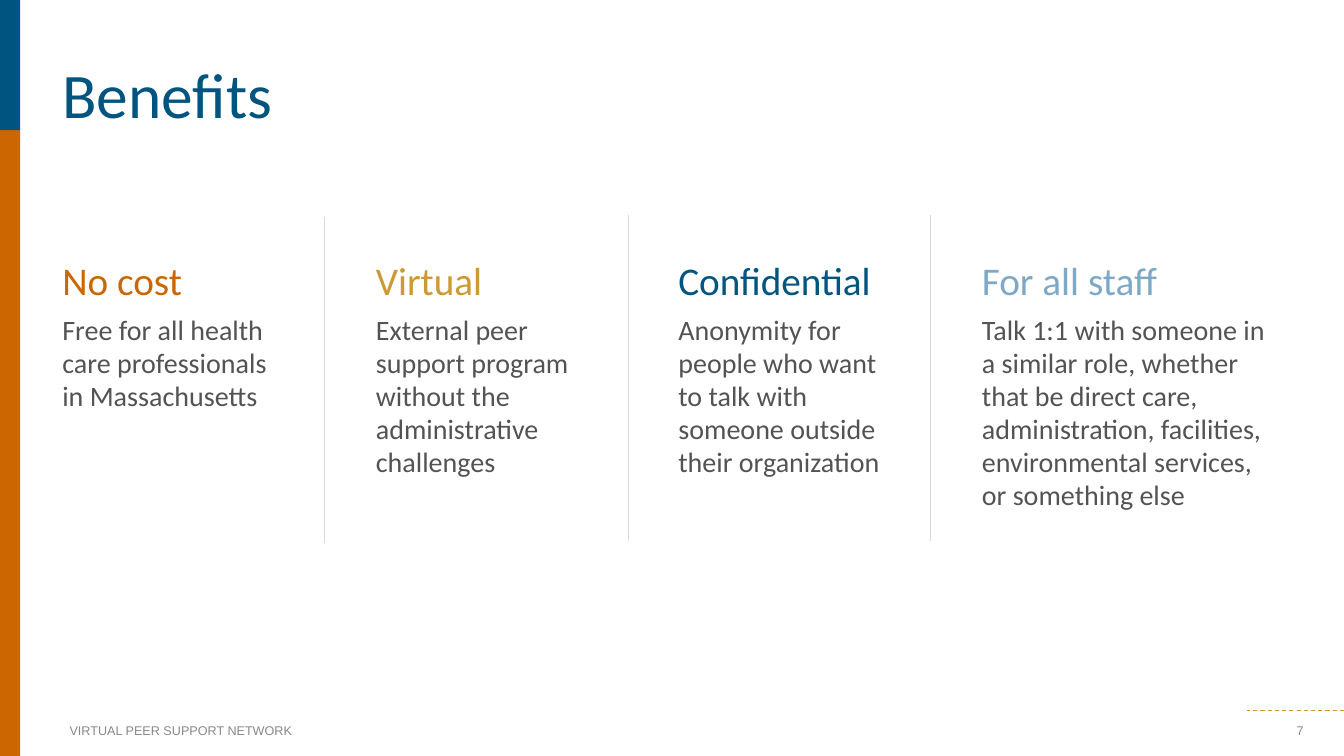
import pptx
import pptx.dml.color
import pptx.enum.dml
import pptx.enum.shapes
import pptx.enum.text
import pptx.oxml.ns
import pptx.util
from pptx.util import Inches

BLUE, ORANGE, GOLD, PALE_BLUE = "005480", "CC6600", "CC9933", "7EA9C6"
BODY_GREY, FOOTER_GREY, RULE_GREY = "535353", "898989", "D9D9D9"

BENEFITS = [
    ("No cost", ORANGE, 2.3, "Free for all health care professionals in Massachusetts"),
    ("Virtual", GOLD, 2.2,
     "External peer support program without the administrative challenges"),
    ("Confidential", BLUE, 2.2,
     "Anonymity for people who want to talk with someone outside their organization"),
    ("For all staff", PALE_BLUE, 3.01,
     "Talk 1:1 with someone in a similar role, whether that be direct care, "
     "administration, facilities, environmental services, or something else"),
]
COLUMN_LEFTS = [0.52, 3.63, 6.63, 9.64]
DIVIDERS = [(3.22, 2.15), (6.23, 2.13), (9.23, 2.13)]


def colour(value):
    """Turn a hex string into a colour."""
    return pptx.dml.color.RGBColor.from_string(value)


def style(paragraph, text, size, value, font="Calibri"):
    """Write one paragraph and set its font."""
    paragraph.text = text
    paragraph.font.size = pptx.util.Pt(size)
    paragraph.font.name = font
    paragraph.font.color.rgb = colour(value)


def clear_margins(frame):
    """Remove all four insets of a text frame."""
    frame.margin_left = frame.margin_right = 0
    frame.margin_top = frame.margin_bottom = 0


def add_title(slide, text):
    """Place and format the title placeholder."""
    title = slide.shapes.title
    title.left, title.top = Inches(0.62), Inches(0.21)
    title.width, title.height = Inches(9.99), Inches(1.09)
    frame = title.text_frame
    clear_margins(frame)
    frame.vertical_anchor = pptx.enum.text.MSO_ANCHOR.BOTTOM
    style(frame.paragraphs[0], text, 45.3, BLUE)
    frame.paragraphs[0].alignment = pptx.enum.text.PP_ALIGN.LEFT


def add_bar(slide, top, height, value):
    """Add one part of the coloured bar on the left edge."""
    bar = slide.shapes.add_shape(
        pptx.enum.shapes.MSO_SHAPE.RECTANGLE,
        0, Inches(top), Inches(0.2), Inches(height))
    bar.shadow.inherit = False
    bar.fill.solid()
    bar.fill.fore_color.rgb = colour(value)
    bar.line.fill.background()


def add_line(slide, start, end, value, dashed=False):
    """Add a thin straight line between two points."""
    line = slide.shapes.add_connector(
        pptx.enum.shapes.MSO_CONNECTOR.STRAIGHT,
        *(Inches(length) for length in start + end))
    line.line.color.rgb = colour(value)
    line.line.width = pptx.util.Pt(0.75)
    if dashed:
        line.line.dash_style = pptx.enum.dml.MSO_LINE.DASH
    properties = line._element.spPr
    properties.append(properties.makeelement(pptx.oxml.ns.qn("a:effectLst"), {}))


def add_text_box(slide, left, top, width, height):
    """Add a wrapping text box and return its frame."""
    box = slide.shapes.add_textbox(
        Inches(left), Inches(top), Inches(width), Inches(height))
    box.text_frame.word_wrap = True
    return box.text_frame


def add_benefit(slide, left, width, heading, value, description):
    """Add a column with a coloured heading and a description."""
    frame = add_text_box(slide, left, 2.49, width, 2.7)
    style(frame.paragraphs[0], heading, 28, value)
    style(frame.add_paragraph(), description, 20, BODY_GREY)
    for paragraph in frame.paragraphs:
        paragraph.space_before = pptx.util.Pt(8)
    frame.paragraphs[1].line_spacing = 0.98


def add_footer(slide, left, width, text, alignment):
    """Add a small text at the foot of the slide."""
    frame = add_text_box(slide, left, 7.05, width, 0.4)
    clear_margins(frame)
    frame.vertical_anchor = pptx.enum.text.MSO_ANCHOR.MIDDLE
    style(frame.paragraphs[0], text, 9, FOOTER_GREY, "Arial")
    frame.paragraphs[0].alignment = alignment


def main():
    """Build the benefits slide and save it."""
    deck = pptx.Presentation()
    deck.slide_width, deck.slide_height = Inches(13.33), Inches(7.5)
    slide = deck.slides.add_slide(deck.slide_layouts[5])
    add_bar(slide, 1.29, 6.21, ORANGE)
    add_bar(slide, 0, 1.29, BLUE)
    add_title(slide, "Benefits")
    for left, (heading, value, width, description) in zip(COLUMN_LEFTS, BENEFITS):
        add_benefit(slide, left, width, heading, value, description)
    for x, top in DIVIDERS:
        add_line(slide, (x, top), (x, top + 3.24), RULE_GREY)
    add_line(slide, (13.33, 7.05), (12.37, 7.05), GOLD, dashed=True)
    align = pptx.enum.text.PP_ALIGN
    add_footer(slide, 0.69, 6.84, "VIRTUAL PEER SUPPORT NETWORK", align.LEFT)
    add_footer(slide, 9.82, 3.11, "7", align.RIGHT)
    deck.save("out.pptx")


if __name__ == "__main__":
    main()
